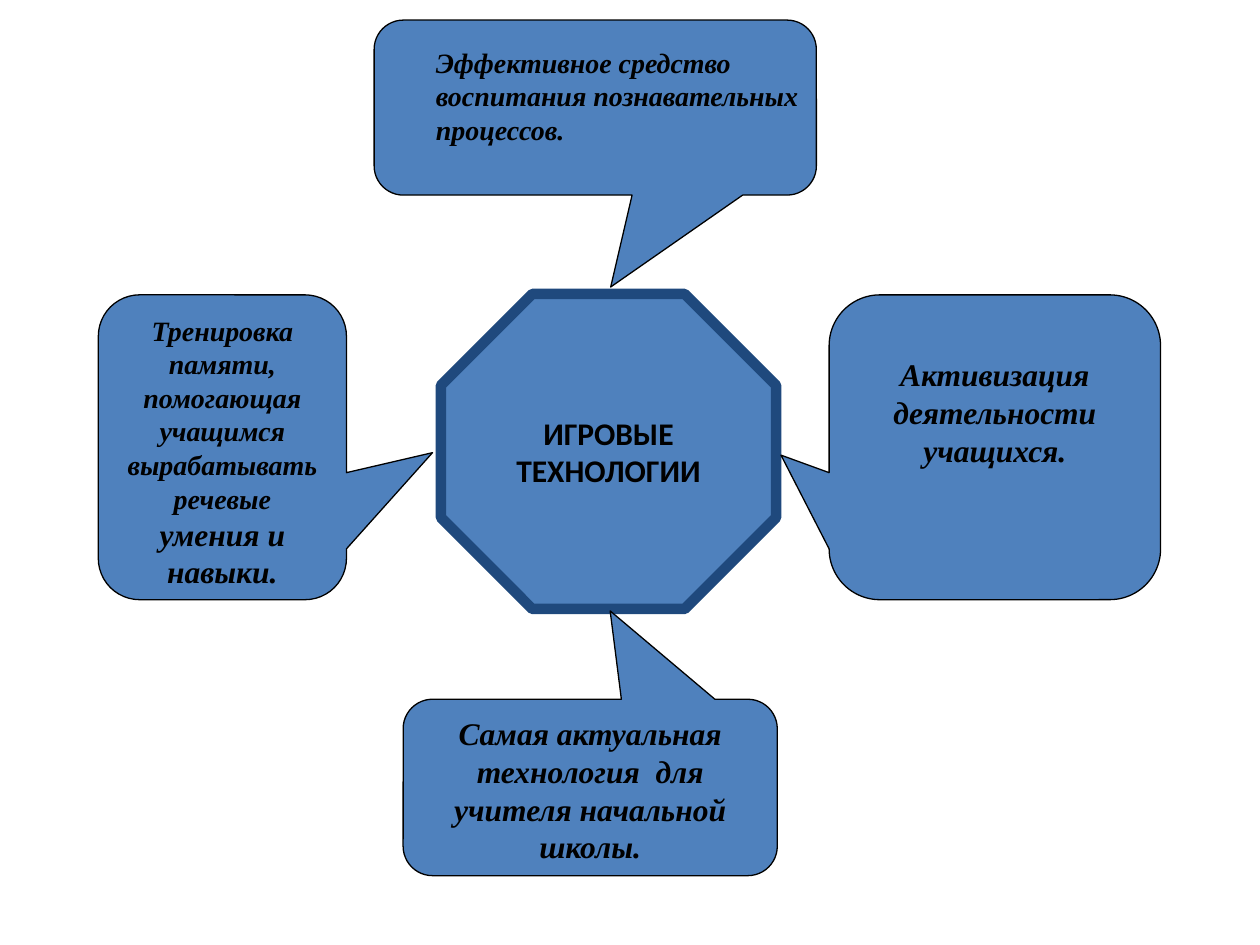
"""Build a slide with four callouts pointing at a central octagon."""
from pptx import Presentation
from pptx.dml.color import RGBColor
from pptx.enum.shapes import MSO_SHAPE
from pptx.enum.text import MSO_ANCHOR, PP_ALIGN
from pptx.util import Pt

OCTAGON = MSO_SHAPE.OCTAGON
CALLOUT = MSO_SHAPE.ROUNDED_RECTANGULAR_CALLOUT
TOP, MIDDLE = MSO_ANCHOR.TOP, MSO_ANCHOR.MIDDLE
LEFT, CENTER = PP_ALIGN.LEFT, PP_ALIGN.CENTER

BLUE, NAVY, BLACK = "4F81BD", "1F497D", "000000"
SERIF = "Times New Roman"

TOPIC = [[("ИГРОВЫЕ", 18)], [("ТЕХНОЛОГИИ", 18)]]
TOPIC_BOX = (252, 168, 191.5, 180)
MEANS = [[("Эффективное средство воспитания познавательных процессов.", 16)]]
MEANS_BOX = (242, 22.3, 264.2, 64)

SIDE_TOP, SIDE_HEIGHT = 168.5, 174.2
CALLOUTS = [
    {"box": (213.8, 11.5, 252.7, 100), "tip": (349, 164)},
    {"box": (56.2, SIDE_TOP, 141.8, SIDE_HEIGHT), "tip": (247.2, 258.7),
     "paragraphs": [[("Тренировка памяти, помогающая учащимся вырабатывать речевые ", 16),
                     ("умения и навыки.", 18)]]},
    {"box": (473.8, SIDE_TOP, 189.4, SIDE_HEIGHT), "tip": (446.3, 260.1), "inset_top": 26,
     "paragraphs": [[("Активизация деятельности учащихся.", 18)]]},
    {"box": (230.4, 399.6, 213.8, 100.8), "tip": (348.7, 349.1),
     "paragraphs": [[("Самая актуальная технология  для учителя начальной школы.", 18)]]},
]


def color(value):
    return RGBColor.from_string(value)


def write(shape, paragraphs, font=SERIF, italic=True, align=CENTER, anchor=TOP,
          wrap=True, inset_top=3.6):
    frame = shape.text_frame
    frame.word_wrap = wrap
    frame.vertical_anchor = anchor
    frame.margin_left = frame.margin_right = Pt(7.2)
    frame.margin_top, frame.margin_bottom = Pt(inset_top), Pt(3.6)
    for index, runs in enumerate(paragraphs):
        paragraph = frame.paragraphs[0] if index == 0 else frame.add_paragraph()
        paragraph.alignment = align
        for words, size in runs:
            run = paragraph.add_run()
            run.text = words
            run.font.name, run.font.size = font, Pt(size)
            run.font.bold, run.font.italic = True, italic
            run.font.color.rgb = color(BLACK)


def add_figure(slide, preset, box, line, line_width):
    figure = slide.shapes.add_shape(preset, *map(Pt, box))
    figure.shadow.inherit = False
    figure.fill.solid()
    figure.fill.fore_color.rgb = color(BLUE)
    figure.line.color.rgb = color(line)
    figure.line.width = Pt(line_width)
    return figure


def add_callout(slide, box, tip, paragraphs=(), inset_top=3.6):
    left, top, width, height = box
    callout = add_figure(slide, CALLOUT, box, BLACK, 0.75)
    callout.adjustments[0] = (tip[0] - left) / width - 0.5
    callout.adjustments[1] = (tip[1] - top) / height - 0.5
    write(callout, paragraphs, inset_top=inset_top)


def main():
    deck = Presentation()
    deck.slide_width, deck.slide_height = Pt(720), Pt(540)
    slide = deck.slides.add_slide(deck.slide_layouts[6])

    topic = add_figure(slide, OCTAGON, TOPIC_BOX, NAVY, 6)
    topic.adjustments[0] = 0.29
    write(topic, TOPIC, font="Calibri", italic=False, anchor=MIDDLE, wrap=False)

    for callout in CALLOUTS:
        add_callout(slide, **callout)

    means = slide.shapes.add_textbox(*map(Pt, MEANS_BOX))
    write(means, MEANS, align=LEFT)
    deck.save("out.pptx")


if __name__ == "__main__":
    main()
